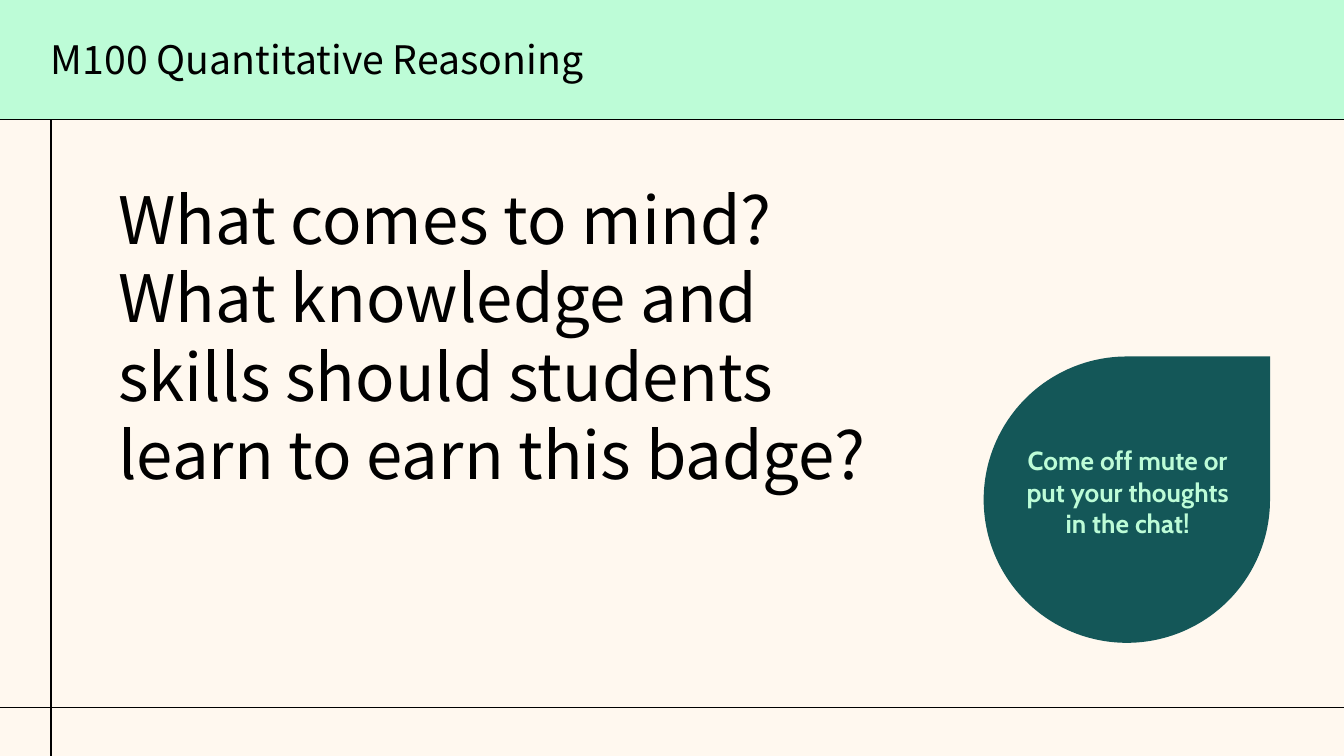
from pptx import Presentation
from pptx.dml.color import RGBColor as Rgb
from pptx.enum.shapes import MSO_CONNECTOR as Conn, MSO_SHAPE as Kind
from pptx.enum.text import PP_ALIGN as Align
from pptx.oxml.ns import qn
from pptx.util import Pt
from lxml.etree import SubElement as Sub

WIDE, HIGH = 720, 405
EDGE, BAND, FOOT = 27.3, 64.2, 379.2


def hue(code):
    return Rgb.from_string(code)


def write(frame, text, size=14, font="Noto Sans CJK KR", ink="000000",
          bold=False, align=Align.LEFT, lead=None, after=0):
    frame.word_wrap = True
    frame.margin_left = frame.margin_right = 0
    frame.margin_top = frame.margin_bottom = 0
    para = frame.paragraphs[0]
    para.text = text
    para.alignment = align
    para.line_spacing = lead
    para.space_after = Pt(after)
    for run in para.runs:
        run.font.name = font
        run.font.size = Pt(size)
        run.font.bold = bold
        run.font.color.rgb = hue(ink)


class Page:
    ink, mint, teal, cream = "000000", "BDFCD7", "145758", "FFF8EF"

    def __init__(self, deck):
        self.slide = deck.slides.add_slide(deck.slide_layouts[6])
        fill = self.slide.background.fill
        fill.solid()
        fill.fore_color.rgb = hue(self.cream)

    def shape(self, kind, box, fill):
        item = self.slide.shapes.add_shape(kind, *map(Pt, box))
        item.shadow.inherit = False
        item.fill.solid()
        item.fill.fore_color.rgb = hue(fill)
        item.line.fill.background()

    def rule(self, *ends):
        item = self.slide.shapes.add_connector(Conn.STRAIGHT, *map(Pt, ends))
        item.line.color.rgb = hue(self.ink)
        item.line.width = Pt(0.75)
        Sub(item._element.spPr, qn("a:effectLst"))

    def text(self, box, words, **style):
        item = self.slide.shapes.add_textbox(*map(Pt, box))
        write(item.text_frame, words, **style)


def main():
    deck = Presentation()
    deck.slide_width, deck.slide_height = Pt(WIDE), Pt(HIGH)
    page = Page(deck)
    page.rule(EDGE, 0, EDGE, HIGH)
    page.shape(Kind.RECTANGLE, (0, 0, WIDE, BAND), page.mint)
    page.text((EDGE, 21.6, 475, 23), "M100 Quantitative Reasoning",
              size=21, lead=0.9)
    page.rule(WIDE, BAND, 0, BAND)
    page.text((63.4, 95.8, 427, 170),
              "What comes to mind? \vWhat knowledge and skills should "
              "students learn to earn this badge?", size=35, after=12)
    page.shape(Kind.TEAR, (527, 191, 153.4, 153.4), page.teal)
    page.text((549.4, 238.3, 109.4, 67.7),
              "Come off mute or put your thoughts in the chat!",
              font="Cabin", ink=page.mint, bold=True, align=Align.CENTER)
    page.rule(WIDE, FOOT, 0, FOOT)
    deck.save("out.pptx")


if __name__ == "__main__":
    main()
